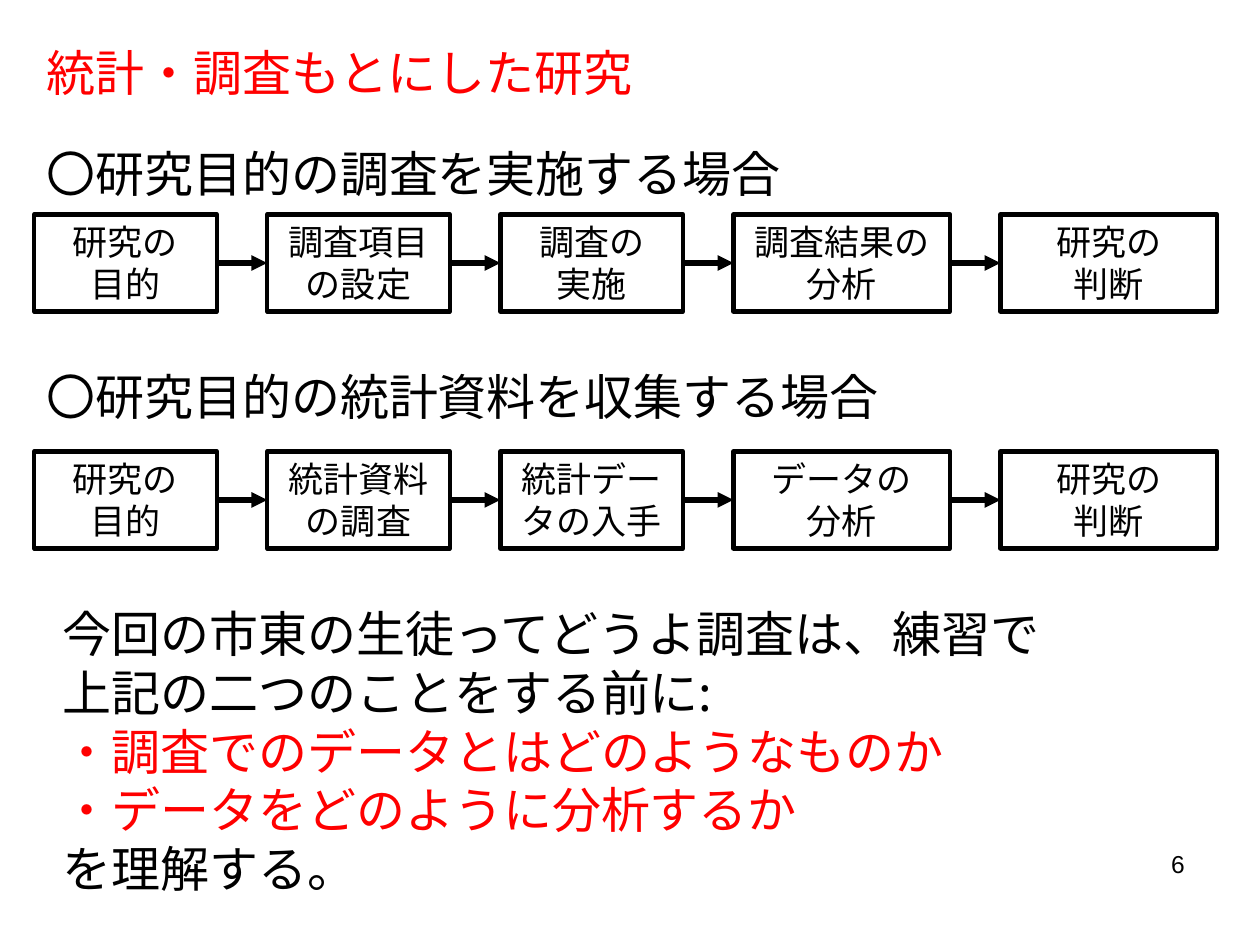
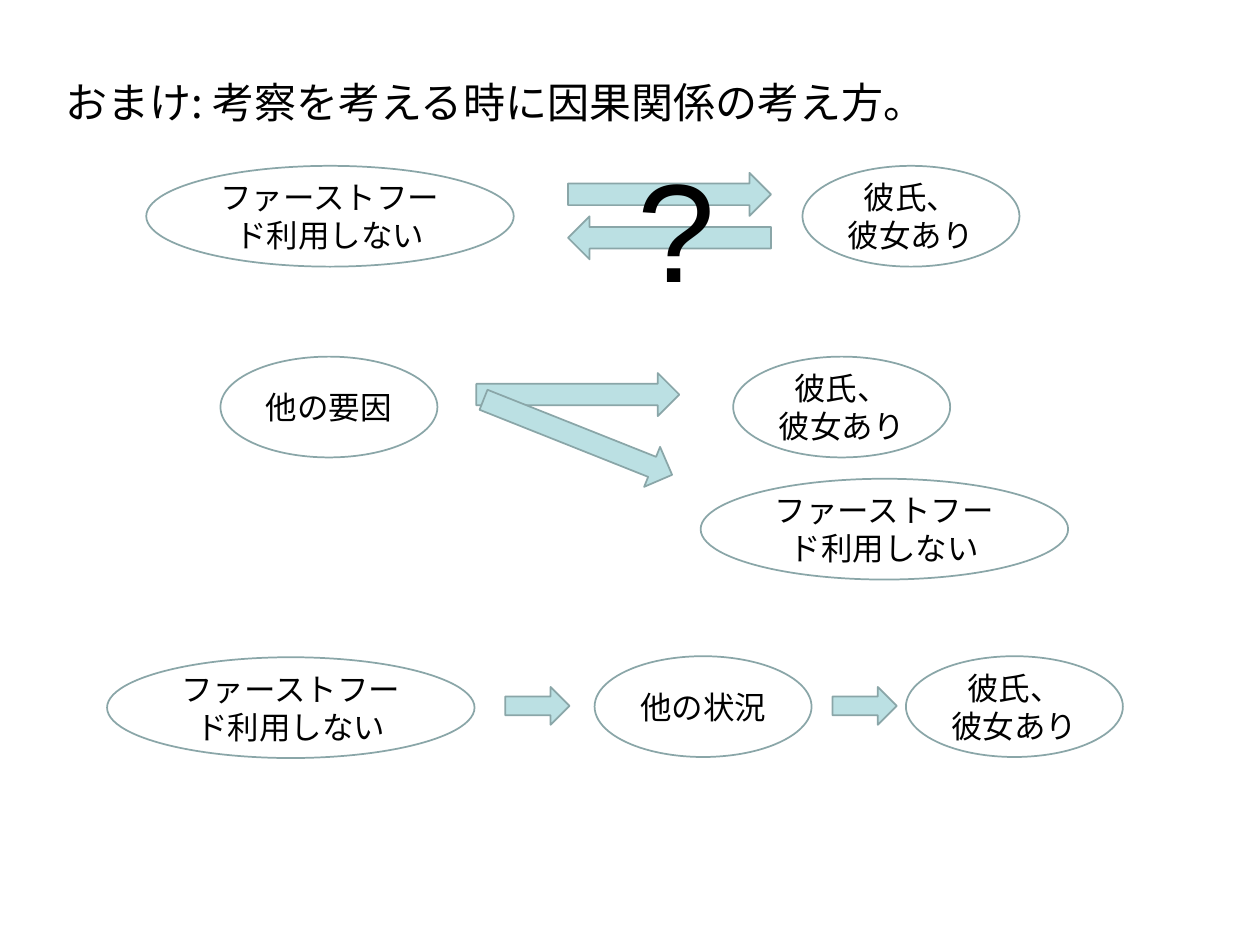
from itertools import pairwise

from lxml.etree import SubElement
from pptx import Presentation
from pptx.dml.color import RGBColor
from pptx.enum.lang import MSO_LANGUAGE_ID as Lang
from pptx.enum.shapes import MSO_CONNECTOR as Link, MSO_SHAPE as Shape
from pptx.enum.text import MSO_ANCHOR as Anchor, PP_ALIGN as Align
from pptx.oxml.ns import qn
from pptx.util import Pt

COLORS = {"ink": "000000", "accent": "FF0000", "arrow": "BBE0E3", "outline": "8AA6A8"}
ARIAL = "Arial"
NOTO = "Noto Sans CJK JP"
NO_FASTFOOD = "ファーストフード利用しない"
PARTNER = "彼氏、\n彼女あり"
WIDE, NARROW, OVAL_HEIGHT = 210, 124, 57.6


def rgb(name):
    return RGBColor.from_string(COLORS[name])


def points(*lengths):
    return [Pt(length) for length in lengths]


def write(frame, text, size=28, font=NOTO, color="ink", align=Align.LEFT,
          anchor=Anchor.TOP, more=False):
    frame.word_wrap = True
    frame.vertical_anchor = anchor
    paragraph = frame.add_paragraph() if more else frame.paragraphs[0]
    paragraph.alignment = align
    for index, line in enumerate(text.split("\n")):
        if index:
            paragraph.add_line_break()
        run = paragraph.add_run()
        run.text = line
        run.font.size = Pt(size)
        run.font.name = font
        run.font.color.rgb = rgb(color)
        run.font.language_id = Lang.JAPANESE
        SubElement(run.font._element, qn("a:ea"), typeface=font)


def add_text(slide, box, text, **style):
    frame = slide.shapes.add_textbox(*points(*box)).text_frame
    write(frame, text, **style)
    return frame


def add_figure(slide, kind, box, fill=None, line="outline", weight=1):
    figure = slide.shapes.add_shape(kind, *points(*box))
    figure.shadow.inherit = False
    if fill:
        figure.fill.solid()
        figure.fill.fore_color.rgb = rgb(fill)
    else:
        figure.fill.background()
    figure.line.color.rgb = rgb(line)
    figure.line.width = Pt(weight)
    return figure


def add_step(slide, box, text):
    step = add_figure(slide, Shape.RECTANGLE, box, line="ink", weight=2.5)
    write(step.text_frame, text, size=20, align=Align.CENTER)
    return step


def join_steps(slide, before, after):
    link = slide.shapes.add_connector(Link.STRAIGHT, 0, 0, 0, 0)
    link.begin_connect(before, 3)
    link.end_connect(after, 1)
    link.line.color.rgb = rgb("ink")
    link.line.width = Pt(3)
    SubElement(link.line._get_or_add_ln(), qn("a:tailEnd"), type="triangle")
    SubElement(link._element.spPr, qn("a:effectLst"))


def add_process(slide, left, top, heading, heading_rise, labels):
    add_text(slide, (left, top - heading_rise, 666, 41), heading)
    steps = []
    x = left
    for label, width in zip(labels, (104.4, 104.4, 104.4, 123.8, 123.8)):
        steps.append(add_step(slide, (x, top, width, 55.4), label))
        x += width + 28.8
    for before, after in pairwise(steps):
        join_steps(slide, before, after)


def add_summary(slide, box):
    summary = add_text(slide, box, "今回の市東の生徒ってどうよ調査は、練習で")
    write(summary, "上記の二つのことをする前に:", more=True)
    write(summary, "・調査でのデータとはどのようなものか\n・データをどのように分析するか",
          color="accent", more=True)
    write(summary, "を理解する。", more=True)


def add_factor(slide, left, top, width, text):
    oval = add_figure(slide, Shape.OVAL, (left, top, width, OVAL_HEIGHT))
    write(oval.text_frame, text, size=18, font=ARIAL, align=Align.CENTER,
          anchor=Anchor.MIDDLE)


def add_arrow(slide, left, top, width=116, height=24.6, turn=0):
    arrow = add_figure(slide, Shape.RIGHT_ARROW, (left, top, width, height), fill="arrow")
    arrow.rotation = turn


def add_mutual_cause(slide, left, top):
    add_arrow(slide, left + 241, top + 28.8, turn=180)
    add_factor(slide, left, top, WIDE, NO_FASTFOOD)
    add_factor(slide, left + 375, top, NARROW, PARTNER)
    add_arrow(slide, left + 241, top + 4)
    add_text(slide, (left + 266.5, top - 17.2, 73.4, 104.4), "?",
             size=80, font=ARIAL, align=Align.CENTER)


def add_common_cause(slide, left, top):
    add_factor(slide, left, top, NARROW, "他の要因")
    add_factor(slide, left + 293, top, NARROW, PARTNER)
    add_arrow(slide, left + 146.2, top + 9.4)
    add_arrow(slide, left + 146.2, top + 33.8, turn=21.7)
    add_factor(slide, left + 274.4, top + 69.8, WIDE, NO_FASTFOOD)


def add_chain_cause(slide, left, top):
    add_factor(slide, left, top + 0.6, WIDE, NO_FASTFOOD)
    add_factor(slide, left + 278.6, top, NARROW, "他の状況")
    add_factor(slide, left + 456.5, top, NARROW, PARTNER)
    for offset in (227.5, 414.5):
        add_arrow(slide, left + offset, top + 17.6, width=36.7, height=21.6)


def build_research_slide(slide):
    add_text(slide, (516, 481.7, 168, 37.4), "6", size=14, font=ARIAL, align=Align.RIGHT)
    add_text(slide, (19.5, 13, 612, 48.2), "統計・調査もとにした研究",
             font=ARIAL, color="accent", anchor=Anchor.BOTTOM)
    add_process(slide, 19.5, 122.6, "〇研究目的の調査を実施する場合", 44,
                ("研究の\n目的", "調査項目の設定", "調査の\n実施",
                 "調査結果の分析", "研究の\n判断"))
    add_process(slide, 19.5, 258, "〇研究目的の統計資料を収集する場合", 52,
                ("研究の\n目的", "統計資料の調査", "統計データの入手",
                 "データの\n分析", "研究の\n判断"))
    add_summary(slide, (28.8, 341.3, 666, 177))


def build_causality_slide(slide):
    add_text(slide, (30.2, 40.3, 540, 82.8),
             "おまけ: 考察を考える時に因果関係の考え方。", size=24)
    add_mutual_cause(slide, 83.6, 94.8)
    add_common_cause(slide, 126, 203.8)
    add_chain_cause(slide, 61.2, 375)


def main():
    deck = Presentation()
    deck.slide_width, deck.slide_height = points(720, 540)
    for build in (build_research_slide, build_causality_slide):
        build(deck.slides.add_slide(deck.slide_layouts[6]))
    deck.save("out.pptx")


if __name__ == "__main__":
    main()
